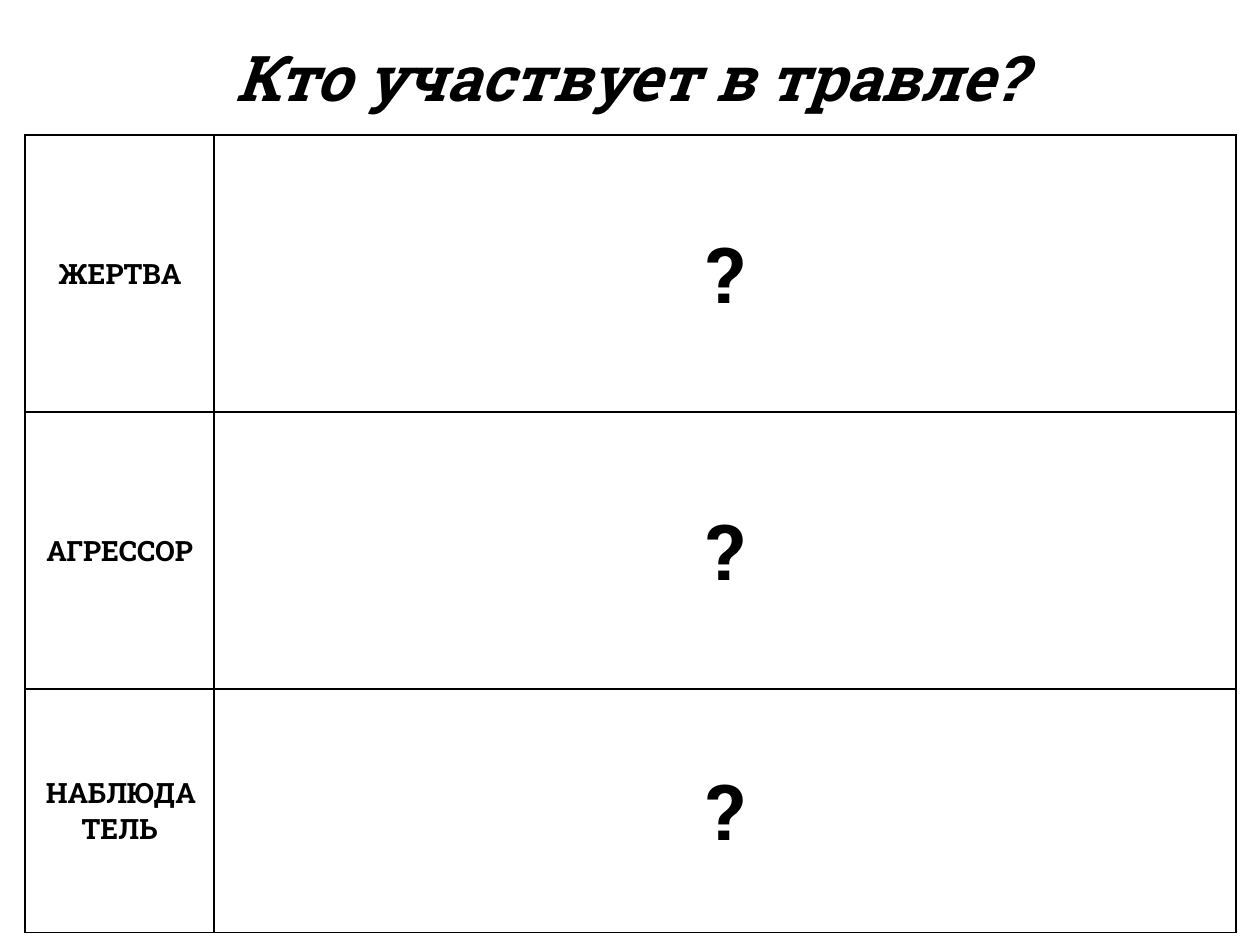
"""Build a slide with a table of the roles in bullying."""
from pptx import Presentation
from pptx.dml.color import RGBColor
from pptx.enum import text
from pptx.oxml import parse_xml
from pptx.oxml.ns import nsdecls
from pptx.util import Inches, Pt

TITLE = "Кто участвует в травле?"
ROLES = [("ЖЕРТВА", "?"), ("АГРЕССОР", "?"), ("НАБЛЮДАТЕЛЬ", "?")]
COLUMN_WIDTHS = [1.5, 8.11]
ROW_HEIGHTS = [2.2, 2.2, 1.93]
COLUMN_FONT_SIZES = [16, 44]
FONT_NAME = "Roboto Slab"
BLACK = RGBColor(0, 0, 0)
WHITE = RGBColor(255, 255, 255)


def write(text_frame, wording, size, italic=False):
    text_frame.text = wording
    paragraph = text_frame.paragraphs[0]
    paragraph.alignment = text.PP_ALIGN.CENTER
    font = paragraph.runs[0].font
    font.name, font.size, font.color.rgb = FONT_NAME, Pt(size), BLACK
    font.bold, font.italic = True, italic


def add_borders(cell):
    properties = cell._tc.get_or_add_tcPr()
    for index, side in enumerate(("lnL", "lnR", "lnT", "lnB")):
        border = parse_xml(
            f'<a:{side} {nsdecls("a")} w="{Pt(1)}"><a:solidFill>'
            f'<a:srgbClr val="{BLACK}"/></a:solidFill></a:{side}>'
        )
        properties.insert(index, border)


def add_title(slide):
    box = slide.shapes.add_textbox(Inches(0.5), Inches(0.3), Inches(9), Inches(0.61))
    box.text_frame.word_wrap = True
    box.text_frame.vertical_anchor = text.MSO_ANCHOR.MIDDLE
    write(box.text_frame, TITLE, 36, italic=True)


def add_roles(slide):
    table = slide.shapes.add_table(
        len(ROLES), len(COLUMN_WIDTHS), Inches(0.2), Inches(1.07),
        Inches(sum(COLUMN_WIDTHS)), Inches(sum(ROW_HEIGHTS)),
    ).table
    table.first_row = table.horz_banding = False
    for column, width in zip(table.columns, COLUMN_WIDTHS):
        column.width = Inches(width)
    for row, height, wordings in zip(table.rows, ROW_HEIGHTS, ROLES):
        row.height = Inches(height)
        for cell, wording, size in zip(row.cells, wordings, COLUMN_FONT_SIZES):
            write(cell.text_frame, wording, size)
            cell.vertical_anchor = text.MSO_ANCHOR.MIDDLE
            cell.fill.solid()
            cell.fill.fore_color.rgb = WHITE
            add_borders(cell)


def main():
    presentation = Presentation()
    presentation.slide_width, presentation.slide_height = Inches(10), Inches(7.5)
    slide = presentation.slides.add_slide(presentation.slide_layouts[6])
    add_title(slide)
    add_roles(slide)
    presentation.save("out.pptx")


if __name__ == "__main__":
    main()
